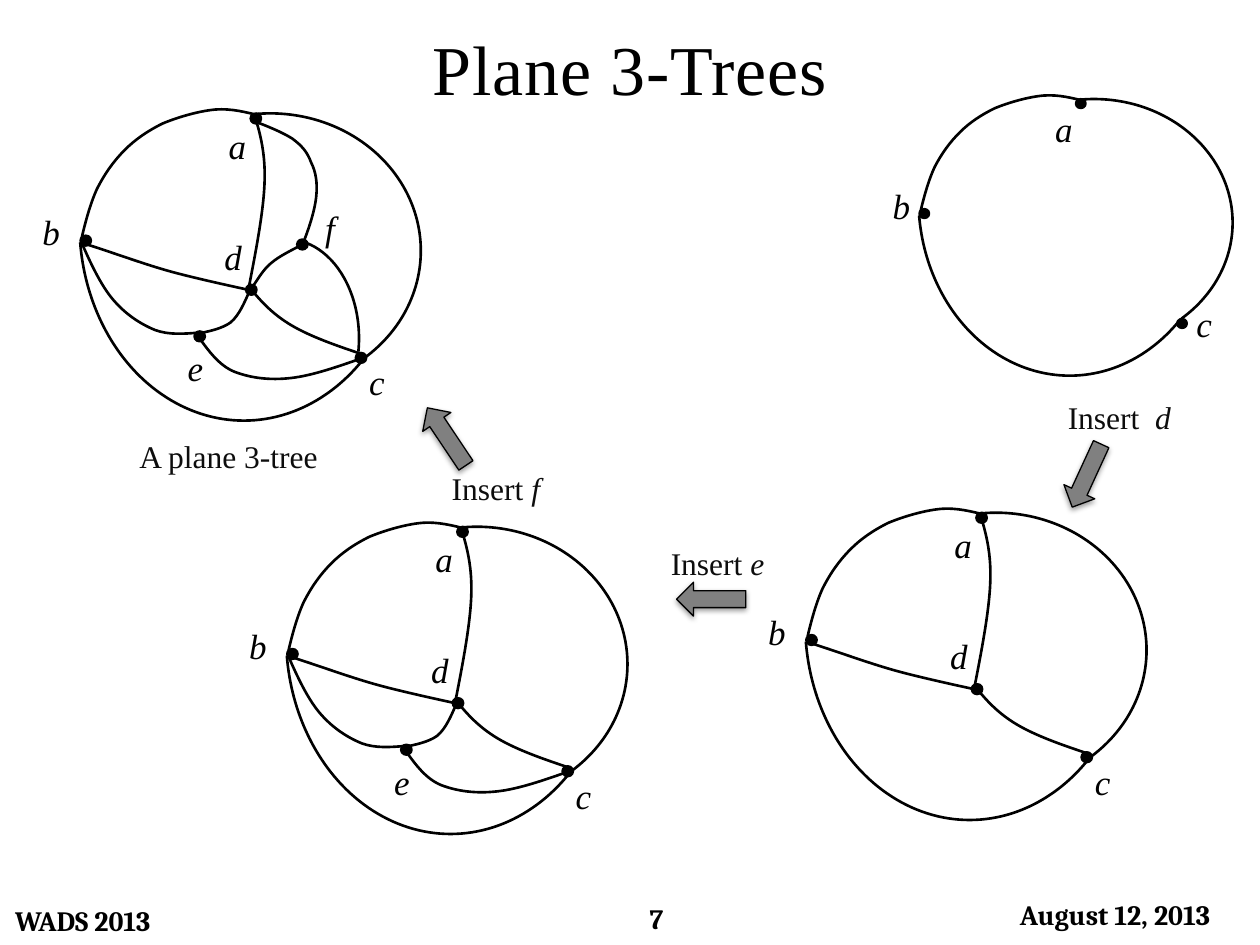
from lxml import etree
from pptx import Presentation
from pptx.dml.color import RGBColor
from pptx.enum.shapes import MSO_SHAPE
from pptx.enum.text import MSO_ANCHOR, PP_ALIGN
from pptx.oxml import parse_xml
from pptx.oxml.ns import nsdecls, qn
from pptx.util import Pt

ARC, OVAL = MSO_SHAPE.ARC, MSO_SHAPE.OVAL
DOWN_ARROW, ROUNDED = MSO_SHAPE.DOWN_ARROW, MSO_SHAPE.ROUNDED_RECTANGLE
LEFT, CENTER, MIDDLE = PP_ALIGN.LEFT, PP_ALIGN.CENTER, MSO_ANCHOR.MIDDLE
BLACK = RGBColor(0x00, 0x00, 0x00)
NEAR_BLACK = RGBColor(0x0D, 0x0D, 0x0D)
GRAY = RGBColor(0x80, 0x80, 0x80)
SERIF, FOOTER_FONT = "Times New Roman", "Cambria"

# Edges between two vertices: a start point, then three points per Bezier piece
CURVES = {
    "fa": [(173.5, 138.2), (177.1, 128.9), (180, 119.5), (180.7, 112.3),
           (181.4, 105.1), (180.7, 98.6), (177.8, 92.9),
           (175.7, 87.1), (172.8, 83.5), (167, 79.2),
           (161.3, 75.6), (152.6, 72), (144.7, 69.1)],
    "ec": [(113.8, 193), (119.5, 200.9), (125.3, 208.8), (133.9, 212.4),
           (143.3, 216), (154.1, 217.4), (166.3, 216),
           (178.6, 214.6), (193, 209.5), (207.4, 204.5)],
    "ed": [(112.3, 190.8), (119.5, 189.4), (126.7, 187.9), (131.8, 184.3),
           (136.8, 180), (139.7, 172.8), (142.6, 166.3)],
    "dc": [(142.6, 164.2), (149, 172.1), (155.5, 179.3), (166.3, 185.8),
           (177.1, 192.2), (191.5, 197.3), (206.6, 202.3)],
    "df": [(144.7, 163.4), (147.6, 159.1), (150.5, 154.1), (154.8, 150.5),
           (159.8, 146.2), (166.3, 143.3), (172.8, 139.7)],
    "ad": [(145.4, 65.5), (149, 77), (151.9, 88.6), (151.2, 105.1),
           (150.5, 121.7), (146.2, 144), (141.8, 166.3)],
    "be": [(46.8, 139), (51.8, 150.5), (57.6, 162.7), (64.1, 170.6),
           (71.3, 179.3), (79.9, 185), (88.6, 188.6),
           (96.5, 191.5), (105.1, 190.8), (113.8, 190.1)],
    "bd": [(47.5, 139), (65.5, 144.7), (82.8, 151.2), (98.6, 155.5),
           (114.5, 159.8), (141.8, 165.6), (141.8, 165.6)],
    "ba": [(46.8, 135.4), (49, 126), (51.8, 115.9), (55.4, 108),
           (59.8, 99.4), (64.8, 92.2), (71.3, 85.7),
           (77, 79.9), (84.2, 74.9), (92.9, 70.6),
           (101.5, 67), (113.8, 63.4), (123.1, 62.6),
           (132.5, 61.9), (140.4, 64.1), (149, 66.2)],
}
# Edges on an ellipse: left, top, width, height, start and end adjustment
ARCS = {
    "cb": (45.4, 15.8, 187.9, 224.6, 28.42, 104.21),
    "ac": (68.4, 64.8, 172.1, 157, 158.4, 28.65),
    "fc": (123.1, 136.8, 82.1, 113, 168.68, 6.44),
}
NODES = {"a": (146.2, 67.7), "b": (49, 137.5), "c": (206.3, 204.5),
         "d": (143.6, 165.6), "e": (114.1, 192.2), "f": (172.8, 139.7)}
LABELS = {"a": (135.7, 83.2), "b": (29.2, 132.5), "c": (215.3, 218.2),
          "d": (133.2, 146.5), "e": (111.6, 210.2), "f": (188.6, 130)}
NODE_WIDTH, NODE_HEIGHT = 6.1, 5.8
LABEL_WIDTH, LABEL_HEIGHT = 24, 22

# Vertices, horizontal and vertical offset and scale, moved nodes and labels
TREES = [
    ("abcdef", 0, 0, 1, 1, {}, {}),
    ("abc", 483.1, -1.7, 0.92, 0.9, {"c": (209.1, 207.3)},
     {"b": (34.7, 132.5), "c": (222.8, 207.5)}),
    ("abcd", 414.7, 228.2, 1, 1, {}, {}),
    ("abcde", 118.1, 236.2, 1, 1, {}, {}),
]


def style(shape, line_width=None, fill=None):
    """Set the outline and fill, either of which may be absent."""
    shape.shadow.inherit = False
    if fill is None:
        shape.fill.background()
    else:
        shape.fill.solid()
        shape.fill.fore_color.rgb = fill
    if line_width is None:
        shape.line.fill.background()
    else:
        shape.line.color.rgb = BLACK
        shape.line.width = Pt(line_width)


def write(shape, runs, size, font=SERIF, color=BLACK, bold=False,
          align=CENTER, wrap=False):
    """Write one paragraph from (text, italic) pairs."""
    frame = shape.text_frame
    frame.word_wrap = wrap
    frame.vertical_anchor = MIDDLE
    paragraph = frame.paragraphs[0]
    paragraph.alignment = align
    for text, italic in runs:
        run = paragraph.add_run()
        run.text = text
        run.font.name = font
        run.font.size = Pt(size)
        run.font.bold = bold
        run.font.italic = italic
        run.font.color.rgb = color


presentation = Presentation()
presentation.slide_width, presentation.slide_height = Pt(720), Pt(540)
slide = presentation.slides.add_slide(presentation.slide_layouts[5])
shapes = slide.shapes

title = shapes.title
title.left, title.top, title.width, title.height = Pt(0), Pt(10.8), Pt(720), Pt(55.4)
write(title, [("Plane 3-Trees", False)], 40, wrap=True)
title.text_frame.paragraphs[0].runs[0].font._element.set("spc", "50")

for text, left, top, width, height, align in [
        ("7", 301, 511.9, 148.3, 25.2, CENTER),
        ("WADS 2013", 0, 509.8, 285.8, 32.4, LEFT),
        ("August 12, 2013", 554.4, 509.8, 165.6, 25.2, CENTER)]:
    footer = shapes.add_shape(ROUNDED, Pt(left), Pt(top), Pt(width), Pt(height))
    style(footer)
    write(footer, [(text, False)], 16, FOOTER_FONT, bold=True, align=align, wrap=True)

for vertices, left, top, scale_x, scale_y, moved_nodes, moved_labels in TREES:
    tree = shapes.add_group_shape().shapes

    for ends, (x, y, width, height, start, end) in ARCS.items():
        if set(ends) <= set(vertices):
            arc = tree.add_shape(ARC, Pt(left + x * scale_x), Pt(top + y * scale_y),
                                 Pt(width * scale_x), Pt(height * scale_y))
            arc.adjustments[0], arc.adjustments[1] = start, end
            style(arc, 1.5)

    for ends, points in CURVES.items():
        if set(ends) <= set(vertices):
            placed = [(Pt(left + x * scale_x), Pt(top + y * scale_y)) for x, y in points]
            builder = tree.build_freeform(*placed[0], scale=1.0)
            builder.add_line_segments(placed[1:], close=False)
            curve = builder.convert_to_shape()
            style(curve, 1.5)
            # Join each three straight segments into one cubic Bezier piece
            segments = list(curve._element.iter(qn("a:lnTo")))
            outline = segments[0].getparent()
            for first in range(0, len(segments), 3):
                bezier = etree.SubElement(outline, qn("a:cubicBezTo"))
                for segment in segments[first:first + 3]:
                    bezier.append(segment[0])
                    outline.remove(segment)

    for vertex in vertices:
        x, y = moved_labels.get(vertex, LABELS[vertex])
        label = tree.add_textbox(Pt(left + x * scale_x - LABEL_WIDTH / 2),
                                 Pt(top + y * scale_y - LABEL_HEIGHT / 2),
                                 Pt(LABEL_WIDTH), Pt(LABEL_HEIGHT))
        frame = label.text_frame
        frame.margin_left = frame.margin_right = Pt(0)
        frame.margin_top = frame.margin_bottom = Pt(0)
        write(label, [(vertex, True)], 20)

        x, y = moved_nodes.get(vertex, NODES[vertex])
        width, height = NODE_WIDTH * scale_x, NODE_HEIGHT * scale_y
        node = tree.add_shape(OVAL, Pt(left + x * scale_x - width / 2),
                              Pt(top + y * scale_y - height / 2), Pt(width), Pt(height))
        style(node, 1.25, BLACK)

for runs, left, top, width in [
        ([("A plane 3-tree ", False)], 70.6, 244.1, 124.6),
        ([("Insert  ", False), ("d", True)], 601.2, 221.8, 77),
        ([("Insert ", False), ("e", True)], 374.4, 305.3, 71.3),
        ([("Insert ", False), ("f", True)], 247.7, 262.8, 71.3)]:
    caption = shapes.add_shape(ROUNDED, Pt(left), Pt(top), Pt(width), Pt(32.4))
    style(caption)
    write(caption, runs, 18, color=NEAR_BLACK)

for left, top, rotation in [(611.3, 252, 24.7), (396.7, 322.6, 90), (245.5, 229.7, 146.2)]:
    arrow = shapes.add_shape(DOWN_ARROW, Pt(left), Pt(top), Pt(19.4), Pt(39.6))
    arrow.rotation = rotation
    style(arrow, 0.75, GRAY)
    effects = arrow._element.spPr.find(qn("a:effectLst"))
    effects.append(parse_xml(
        f'<a:outerShdw {nsdecls("a")} blurRad="{Pt(3.1)}" dist="{Pt(1.6)}" '
        'dir="5400000" rotWithShape="0"><a:srgbClr val="000000">'
        '<a:alpha val="38000"/></a:srgbClr></a:outerShdw>'))

presentation.save("out.pptx")
